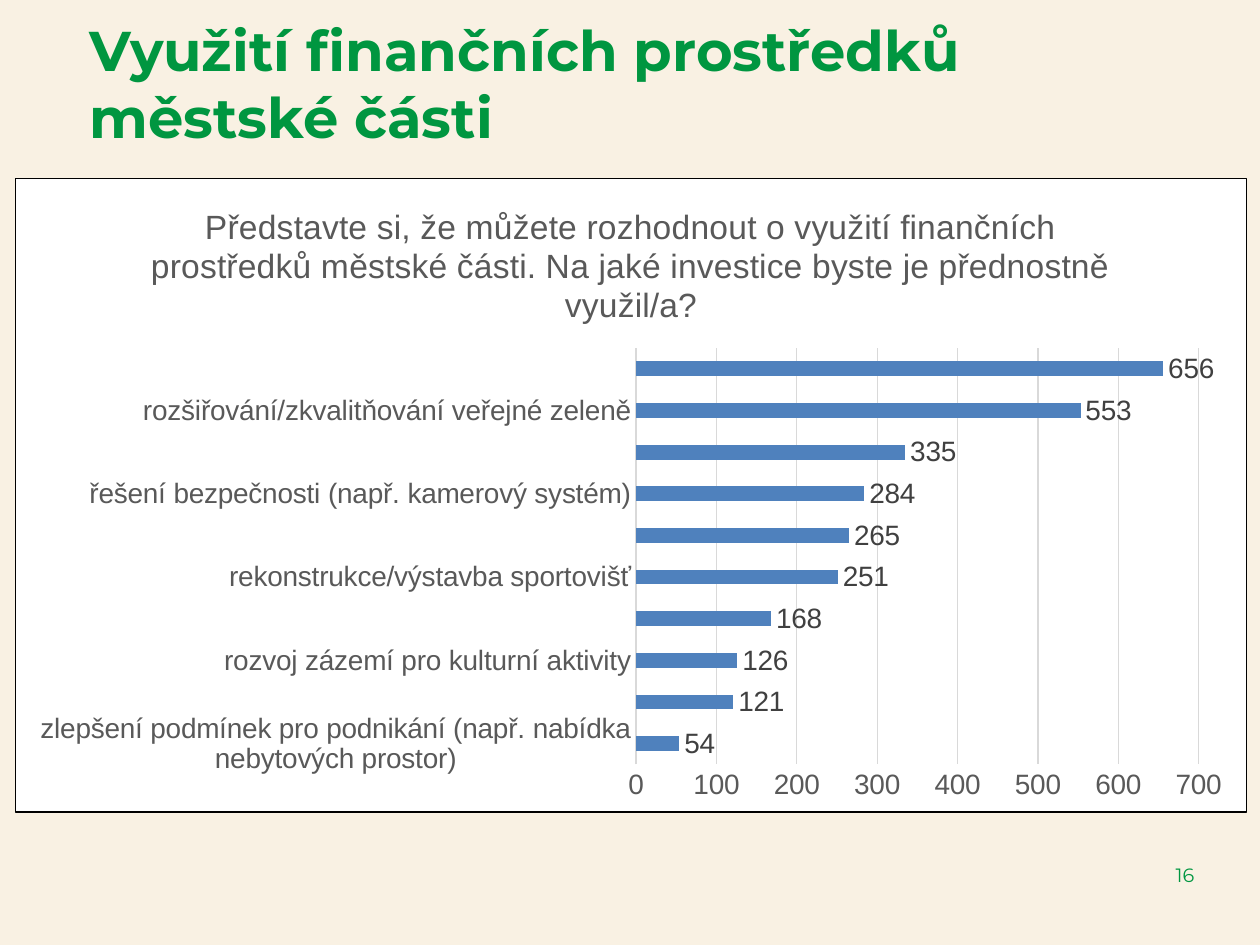
from dataclasses import dataclass

import lxml.etree
import pptx
import pptx.chart.data
import pptx.dml.color
import pptx.enum.chart
import pptx.enum.text
import pptx.oxml
import pptx.util
from pptx.util import Inches


@dataclass(frozen=True)
class Theme:
    background: str = "F9F1E3"
    green: str = "009640"
    bar: str = "4F81BD"
    grid: str = "D9D9D9"
    axis_text: str = "595959"
    label_text: str = "404040"
    heading_font: str = "Montserrat"
    chart_font: str = "Arial"
    heading_size: float = 32
    chart_title_size: float = 19.2
    chart_size: float = 16
    number_size: float = 11
    line_width: float = 0.75


theme = Theme()


def format_font(font, name, size, color, bold=False):
    font.name = name
    font.size = pptx.util.Pt(size)
    font.bold = bold
    font.color.rgb = pptx.dml.color.RGBColor.from_string(color)


def add_text(slide, text, left, top, width, height, size, bold=False,
             align=pptx.enum.text.PP_ALIGN.LEFT):
    shape = slide.shapes.add_textbox(Inches(left), Inches(top), Inches(width), Inches(height))
    frame = shape.text_frame
    frame.word_wrap = True
    frame.vertical_anchor = pptx.enum.text.MSO_ANCHOR.MIDDLE
    paragraph = frame.paragraphs[0]
    paragraph.alignment = align
    run = paragraph.add_run()
    run.text = text
    format_font(run.font, theme.heading_font, size, theme.green, bold)


# Slide and background
presentation = pptx.Presentation()
presentation.slide_width = Inches(10)
presentation.slide_height = Inches(7.5)
slide = presentation.slides.add_slide(presentation.slide_layouts[6])
slide.background.fill.solid()
slide.background.fill.fore_color.rgb = pptx.dml.color.RGBColor.from_string(theme.background)

# Heading and slide number
add_text(slide, "Využití finančních prostředků městské části",
         0.61, 0.23, 9.05, 0.85, size=theme.heading_size, bold=True)
add_text(slide, "16", 9.15, 6.79, 0.51, 0.31, size=theme.number_size,
         align=pptx.enum.text.PP_ALIGN.CENTER)

# Survey answers, from the bottom bar to the top one; every other bar is labelled
answers = [
    ("zlepšení podmínek pro podnikání (např. nabídka nebytových prostor)", 54),
    ("", 121),
    ("rozvoj zázemí pro kulturní aktivity", 126),
    ("", 168),
    ("rekonstrukce/výstavba sportovišť", 251),
    ("", 265),
    ("řešení bezpečnosti (např. kamerový systém)", 284),
    ("", 335),
    ("rozšiřování/zkvalitňování veřejné zeleně", 553),
    ("", 656),
]
chart_data = pptx.chart.data.CategoryChartData()
chart_data.categories = [answer for answer, count in answers]
chart_data.add_series("", [count for answer, count in answers])
chart = slide.shapes.add_chart(
    pptx.enum.chart.XL_CHART_TYPE.BAR_CLUSTERED,
    Inches(0.12), Inches(1.41), Inches(9.78), Inches(5.04), chart_data).chart
format_font(chart.font, theme.chart_font, theme.chart_size, "000000")
chart.has_legend = False

# Chart title
chart.has_title = True
chart.chart_title.include_in_layout = False
title_run = chart.chart_title.text_frame.paragraphs[0].add_run()
title_run.text = ("Představte si, že můžete rozhodnout o využití finančních prostředků "
                  "městské části. Na jaké investice byste je přednostně využil/a?")
format_font(title_run.font, theme.chart_font, theme.chart_title_size, theme.axis_text)

# Axes and gridlines
for axis in (chart.category_axis, chart.value_axis):
    axis.major_tick_mark = pptx.enum.chart.XL_TICK_MARK.NONE
    axis.minor_tick_mark = pptx.enum.chart.XL_TICK_MARK.NONE
    format_font(axis.tick_labels.font, theme.chart_font, theme.chart_size, theme.axis_text)
chart.value_axis.minimum_scale = 0
chart.value_axis.maximum_scale = 700
chart.value_axis.major_unit = 100
chart.value_axis.has_major_gridlines = True
chart.value_axis.format.line.fill.background()
for line in (chart.category_axis.format.line, chart.value_axis.major_gridlines.format.line):
    line.color.rgb = pptx.dml.color.RGBColor.from_string(theme.grid)
    line.width = pptx.util.Pt(theme.line_width)

# Bars and their value labels
plot = chart.plots[0]
plot.gap_width = 182
plot.vary_by_categories = False
series = plot.series[0]
series.format.fill.solid()
series.format.fill.fore_color.rgb = pptx.dml.color.RGBColor.from_string(theme.bar)
labels = series.data_labels
labels.show_value = True
labels.position = pptx.enum.chart.XL_LABEL_POSITION.OUTSIDE_END
format_font(labels.font, theme.chart_font, theme.chart_size, theme.label_text)

# White chart area with a thin black border
chart_namespace = "http://schemas.openxmlformats.org/drawingml/2006/chart"
chart_area = pptx.oxml.parse_xml(
    f'<c:spPr xmlns:c="{chart_namespace}"'
    ' xmlns:a="http://schemas.openxmlformats.org/drawingml/2006/main">'
    '<a:solidFill><a:srgbClr val="FFFFFF"/></a:solidFill>'
    f'<a:ln w="{pptx.util.Pt(theme.line_width)}">'
    '<a:solidFill><a:srgbClr val="000000"/></a:solidFill></a:ln></c:spPr>')
chart.element.find(f"{{{chart_namespace}}}chart").addnext(chart_area)

# Plot position as fractions of the chart area
plot_area = chart.element.find(f".//{{{chart_namespace}}}plotArea")
for old_layout in plot_area.findall(f"{{{chart_namespace}}}layout"):
    plot_area.remove(old_layout)
layout = lxml.etree.Element(f"{{{chart_namespace}}}layout")
manual = lxml.etree.SubElement(layout, f"{{{chart_namespace}}}manualLayout")
for tag, value in (("layoutTarget", "inner"), ("xMode", "edge"), ("yMode", "edge"),
                   ("x", "0.504"), ("y", "0.268"), ("w", "0.457"), ("h", "0.657")):
    lxml.etree.SubElement(manual, f"{{{chart_namespace}}}{tag}", val=value)
plot_area.insert(0, layout)

presentation.save("out.pptx")
